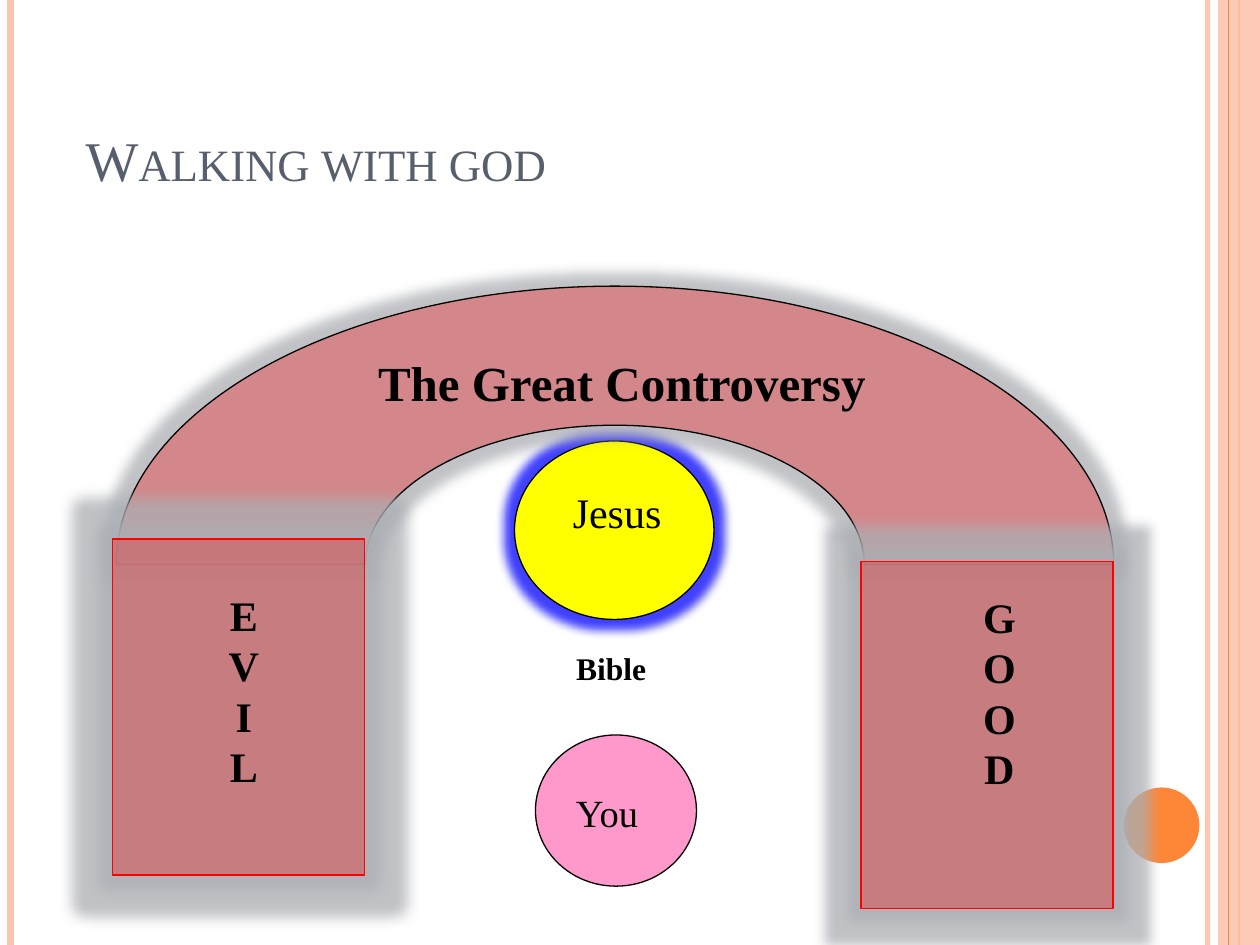
from dataclasses import dataclass

from pptx import Presentation
from pptx.dml.color import RGBColor
from pptx.enum import shapes as sh, text as tx
from pptx.oxml.ns import qn
from pptx.util import Pt
from lxml import etree

HUES = {"peach": "FEC3AE", "orange": "FE8637", "slate": "575F6D", "black": "000000",
        "yellow": "FFFF00", "pink": "FF99CC", "red": "FF0000", "blue": "0000FF",
        "mist": "ABAEB3"}
FONT = "Times New Roman"
RECT, OVAL = sh.MSO_SHAPE.RECTANGLE, sh.MSO_SHAPE.OVAL
BEND = 0.55


@dataclass
class Glow:
    hue: str
    size: float
    alpha: int = 75


@dataclass
class Rule:
    x: float
    width: float
    hue: str
    alpha: int = 100


@dataclass
class Form:
    kind: int
    box: tuple[float, float, float, float]
    fill: str
    line: str | None = None
    alpha: int = 100
    glow: Glow | None = None


@dataclass
class Label:
    words: str
    box: tuple[float, float, float, float]
    size: float
    bold: bool = False
    align: int = tx.PP_ALIGN.CENTER
    hue: str = "black"


def color(name: str) -> RGBColor:
    return RGBColor.from_string(HUES[name])


def fade(node, alpha: int) -> None:
    if alpha < 100:
        etree.SubElement(node, qn("a:alpha")).set("val", str(alpha * 1000))


def shine(shape, glow: Glow) -> None:
    effects = shape._element.spPr.find(qn("a:effectLst"))
    halo = etree.SubElement(effects, qn("a:glow"))
    halo.set("rad", str(Pt(glow.size)))
    tint = etree.SubElement(halo, qn("a:srgbClr"))
    tint.set("val", HUES[glow.hue])
    fade(tint, glow.alpha)


def style(shape, form: Form) -> None:
    shape.shadow.inherit = False
    shape.fill.solid()
    shape.fill.fore_color.rgb = color(form.fill)
    fade(shape._element.spPr.find(qn("a:solidFill"))[0], form.alpha)
    if form.line:
        shape.line.color.rgb = color(form.line)
        shape.line.width = Pt(0.75)
    else:
        shape.line.fill.background()
    if form.glow:
        shine(shape, form.glow)


def draw_form(slide, form: Form) -> None:
    style(slide.shapes.add_shape(form.kind, *map(Pt, form.box)), form)


def draw_rule(slide, rule: Rule) -> None:
    line = slide.shapes.add_connector(
        sh.MSO_CONNECTOR.STRAIGHT, Pt(rule.x), Pt(0), Pt(rule.x), Pt(540))
    line.line.color.rgb = color(rule.hue)
    line.line.width = Pt(rule.width)
    props = line._element.spPr
    fade(props.find(qn("a:ln")).find(qn("a:solidFill"))[0], rule.alpha)
    etree.SubElement(props, qn("a:effectLst"))


def draw_label(slide, label: Label):
    box = slide.shapes.add_textbox(*map(Pt, label.box))
    frame = box.text_frame
    frame.word_wrap = True
    para = frame.paragraphs[0]
    para.text = label.words
    para.alignment = label.align
    for run in para.runs:
        run.font.name = FONT
        run.font.size = Pt(label.size)
        run.font.bold = label.bold
        run.font.color.rgb = color(label.hue)
    return box


def bend(edge, start: tuple[int, int], end: tuple[int, int], rising: bool) -> None:
    (ax, ay), (bx, by) = start, end
    dx, dy = round(BEND * (bx - ax)), round(BEND * (by - ay))
    pulls = [(ax, ay + dy), (bx - dx, by)] if rising else [(ax + dx, ay), (bx, by - dy)]
    curve = etree.Element(qn("a:cubicBezTo"))
    for x, y in pulls + [end]:
        point = etree.SubElement(curve, qn("a:pt"))
        point.set("x", str(x))
        point.set("y", str(y))
    edge.getparent().replace(edge, curve)


def draw_arch(slide, form: Form) -> None:
    left, top, width, height = map(Pt, form.box)
    mid = width // 2
    inner = [(mid // 2, height), (mid, height // 2), (width - mid // 2, height)]
    outer = [(width, height), (mid, 0), (0, height)]
    spots = inner + outer
    path = slide.shapes.build_freeform(left + spots[0][0], top + spots[0][1])
    path.add_line_segments([(left + x, top + y) for x, y in spots[1:]], close=True)
    arch = path.convert_to_shape()
    edges = list(arch._element.spPr.iter(qn("a:lnTo")))
    for index, rising in ((0, True), (1, False), (3, True), (4, False)):
        bend(edges[index], spots[index], spots[index + 1], rising)
    style(arch, form)


def main() -> None:
    deck = Presentation()
    deck.slide_width, deck.slide_height = Pt(720), Pt(540)
    slide = deck.slides.add_slide(deck.slide_layouts[6])

    for rule in (Rule(690, 3, "peach", 93), Rule(6, 4.5, "peach"), Rule(708, 1.5, "orange")):
        draw_rule(slide, rule)
    draw_form(slide, Form(RECT, (696, 0, 24, 540), "peach", alpha=87))
    draw_rule(slide, Rule(702, 0.75, "orange"))
    draw_form(slide, Form(OVAL, (642.2, 450, 43.2, 43.2), "orange"))

    left = tx.PP_ALIGN.LEFT
    title = draw_label(slide, Label("Walking with god", (41.8, 17.8, 648, 96), 32,
                                    align=left, hue="slate"))
    title.text_frame.vertical_anchor = tx.MSO_ANCHOR.BOTTOM
    title.text_frame.paragraphs[0].runs[0].font._element.set("cap", "small")

    draw_form(slide, Form(OVAL, (294, 252, 114, 102), "yellow", "black",
                          glow=Glow("blue", 11)))
    draw_label(slide, Label("Jesus", (313.7, 274.3, 77.8, 36.7), 24))
    draw_label(slide, Label("Bible", (271.2, 367.2, 156.2, 28.8), 18, True))
    draw_form(slide, Form(OVAL, (306, 420, 92, 86.4), "pink", "black"))
    draw_label(slide, Label("You", (322, 447.1, 54, 34.6), 22, align=left))

    draw_arch(slide, Form(RECT, (66.4, 163.5, 570, 159), "red", "black", 30,
                          Glow("mist", 14)))
    draw_label(slide, Label("The Great Controversy", (184.3, 198, 342, 41), 28, True))
    for box, size in (((64.5, 308, 144, 192), 16), ((492, 321, 144, 198), 14)):
        draw_form(slide, Form(RECT, box, "red", "red", 30, Glow("mist", size)))
    for word, x, y, wide in (("EVIL", 94.3, 333.2, 90), ("GOOD", 529, 334.3, 84.2)):
        draw_label(slide, Label("\n".join(word), (x, y, wide, 123.8), 24, True))

    deck.save("out.pptx")


if __name__ == "__main__":
    main()
